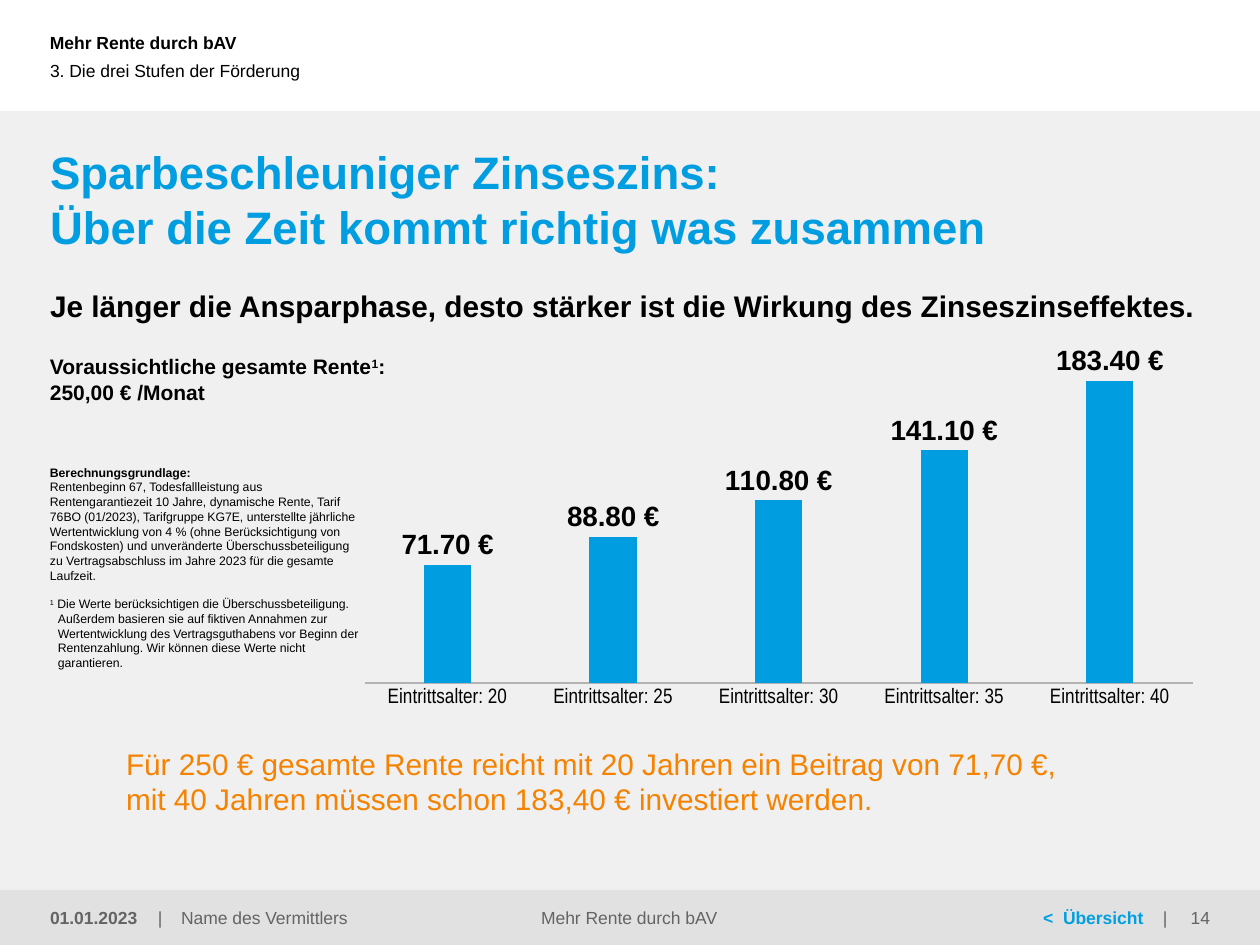
from dataclasses import dataclass

from lxml.etree import SubElement
from pptx import Presentation
from pptx.chart.data import CategoryChartData
from pptx.dml.color import RGBColor
from pptx.enum.chart import XL_CHART_TYPE, XL_LABEL_POSITION, XL_TICK_LABEL_POSITION, XL_TICK_MARK
from pptx.enum.shapes import MSO_SHAPE
from pptx.enum.text import MSO_ANCHOR, MSO_AUTO_SIZE, PP_ALIGN
from pptx.oxml.ns import qn
from pptx.util import Pt


@dataclass(frozen=True)
class Theme:
    font: str = "Arial"
    axis_font: str = "Arial Narrow"
    black: str = "000000"
    blue: str = "009EE0"
    link: str = "00A0E1"
    orange: str = "F58200"
    grey: str = "646464"
    axis: str = "B3B3B3"
    panel: str = "F0F0F0"
    footer: str = "E1E1E1"
    title_size: float = 26
    lead_size: float = 17
    label_size: float = 15.9
    pension_size: float = 12
    axis_size: float = 11.9
    small_size: float = 10
    note_size: float = 7


THEME = Theme()
PX_PER_INCH = 126
FOOTER_TOP, FOOTER_HEIGHT = 890, 55
MARGIN = 50


def px(length):
    return round(length * 914400 / PX_PER_INCH)


def apply_format(target, values):
    for name, value in values.items():
        setattr(target, name, value)


def format_font(font, size, color, bold=False, name=THEME.font):
    apply_format(font, {"name": name, "size": Pt(size), "bold": bold})
    font.color.rgb = RGBColor.from_string(color)


def place(shape, box):
    apply_format(shape, dict(zip(("left", "top", "width", "height"), map(px, box))))


def add_panel(slide, box, color):
    panel = slide.shapes.add_shape(MSO_SHAPE.RECTANGLE, *map(px, box))
    panel.shadow.inherit = False
    panel.fill.solid()
    panel.fill.fore_color.rgb = RGBColor.from_string(color)
    panel.line.fill.background()


def add_runs(paragraph, runs, size):
    """Each run is (text, colour, bold, baseline); a newline is a line break."""
    for text, color, bold, baseline in runs:
        for number, line in enumerate(text.split("\n")):
            if number:
                paragraph.add_line_break()
            if line:
                run = paragraph.add_run()
                run.text = line
                format_font(run.font, size, color, bold)
                if baseline:
                    run.font._element.set("baseline", str(baseline * 1000))


def write(shape, paragraphs, size, anchor=MSO_ANCHOR.TOP, insets=(0, 0, 0, 0),
          align=PP_ALIGN.LEFT, hanging=0, before=0, after=0):
    """Hanging indent and space before apply from the second paragraph on."""
    frame = shape.text_frame
    margins = ("margin_left", "margin_top", "margin_right", "margin_bottom")
    apply_format(frame, {"word_wrap": True, "auto_size": MSO_AUTO_SIZE.NONE,
                         "vertical_anchor": anchor, **dict(zip(margins, map(px, insets)))})
    for number, runs in enumerate(paragraphs):
        paragraph = frame.add_paragraph() if number else frame.paragraphs[0]
        indent = px(hanging) if number else 0
        properties = paragraph._p.get_or_add_pPr()
        properties.set("marL", str(indent))
        properties.set("indent", str(-indent))
        SubElement(properties, qn("a:buNone"))
        apply_format(paragraph, {"alignment": align, "line_spacing": 1.0,
                                 "space_before": Pt(before if number else 0),
                                 "space_after": Pt(after)})
        add_runs(paragraph, runs, size)


def add_text(slide, box, paragraphs, size=THEME.small_size, **layout):
    write(slide.shapes.add_textbox(*map(px, box)), paragraphs, size, **layout)


def fill_placeholder(placeholder, box, text, size, color, bold=False, **layout):
    place(placeholder, box)
    write(placeholder, [[(text, color, bold, 0)]], size, **layout)


def set_plot_area(chart, **fractions):
    plot_area = chart._chartSpace.chart.plotArea
    for old in plot_area.findall(qn("c:layout")):
        plot_area.remove(old)
    layout = SubElement(plot_area, qn("c:layout"))
    plot_area.insert(0, layout)
    manual = SubElement(layout, qn("c:manualLayout"))
    settings = {"layoutTarget": "inner", "xMode": "edge", "yMode": "edge", **fractions}
    for tag, value in settings.items():
        SubElement(manual, qn(f"c:{tag}"), val=str(value))


def add_contribution_chart(slide, box):
    data = CategoryChartData()
    data.categories = [f"Eintrittsalter: {age}" for age in range(20, 41, 5)]
    data.add_series("Series 1", (71.7, 88.8, 110.8, 141.1, 183.4))
    chart = slide.shapes.add_chart(XL_CHART_TYPE.COLUMN_CLUSTERED, *map(px, box), data).chart
    apply_format(chart, {"has_legend": False, "has_title": False})
    format_font(chart.font, THEME.axis_size, THEME.black, name=THEME.axis_font)
    set_plot_area(chart, x=0.014, y=0.032, w=0.982, h=0.864)

    # Axes
    apply_format(chart.value_axis, {"visible": False, "has_major_gridlines": False,
                                    "major_tick_mark": XL_TICK_MARK.NONE,
                                    "minimum_scale": 0, "maximum_scale": 200})
    ages = chart.category_axis
    apply_format(ages, {"major_tick_mark": XL_TICK_MARK.NONE,
                        "minor_tick_mark": XL_TICK_MARK.NONE,
                        "tick_label_position": XL_TICK_LABEL_POSITION.NEXT_TO_AXIS})
    ages.format.line.color.rgb = RGBColor.from_string(THEME.axis)
    ages.format.line.width = Pt(1.5)

    # Columns and their amounts
    columns = chart.plots[0]
    apply_format(columns, {"gap_width": 250, "overlap": -20,
                           "vary_by_categories": False, "has_data_labels": True})
    fill = columns.series[0].format.fill
    fill.solid()
    fill.fore_color.rgb = RGBColor.from_string(THEME.blue)
    amounts = columns.data_labels
    apply_format(amounts, {"show_value": True, "position": XL_LABEL_POSITION.OUTSIDE_END,
                           "number_format": '#,##0.00\\ "€"', "number_format_is_linked": False})
    format_font(amounts.font, THEME.label_size, THEME.black, True)


def add_footer(slide):
    left, center, right = PP_ALIGN.LEFT, PP_ALIGN.CENTER, PP_ALIGN.RIGHT
    grey, link = THEME.grey, THEME.link
    entries = (
        (MARGIN, 105, "01.01.2023", grey, True, left),
        (158, 15, "|", grey, False, left),
        (181, 282, "Name des Vermittlers", grey, False, left),
        (369, 520, "Mehr Rente durch bAV", grey, False, center),
        (1043, 18, "<", link, True, left),
        (1063, 95, "Übersicht", link, True, left),
        (1163, 15, "|", grey, False, left),
        (1180, 30, "14", grey, False, right),
    )
    for x, width, text, color, bold, align in entries:
        add_text(slide, (x, FOOTER_TOP, width, FOOTER_HEIGHT), [[(text, color, bold, 0)]],
                 anchor=MSO_ANCHOR.MIDDLE, align=align)


def main():
    deck = Presentation()
    apply_format(deck, {"slide_width": px(1260), "slide_height": px(945)})
    slide = deck.slides.add_slide(deck.slide_layouts.get_by_name("Comparison"))
    title, lead, chapter, conclusion, unused = slide.placeholders
    unused.element.getparent().remove(unused.element)

    # Background bands, behind the placeholders
    add_panel(slide, (0, 111, 1260, 834), THEME.panel)
    add_panel(slide, (0, FOOTER_TOP, 1260, FOOTER_HEIGHT), THEME.footer)
    for placeholder in (title, lead, chapter, conclusion):
        slide.shapes._spTree.append(placeholder.element)

    # Header, title and statements
    black = THEME.black
    add_text(slide, (MARGIN, 0, 830, 85), [[("Mehr Rente durch bAV", black, True, 0)]],
             anchor=MSO_ANCHOR.MIDDLE)
    fill_placeholder(chapter, (0, 31, 901, 79), "3. Die drei Stufen der Förderung",
                     THEME.small_size, black, anchor=MSO_ANCHOR.MIDDLE,
                     insets=(MARGIN, 0, 0, 0), after=12)
    fill_placeholder(title, (MARGIN, 144, 1162, 69),
                     "Sparbeschleuniger Zinseszins:\nÜber die Zeit kommt richtig was zusammen",
                     THEME.title_size, THEME.blue, True)
    fill_placeholder(lead, (MARGIN, 288, 1162, 37),
                     "Je länger die Ansparphase, desto stärker ist die Wirkung des Zinseszinseffektes.",
                     THEME.lead_size, black, True, after=12)
    fill_placeholder(conclusion, (126, 743, 1085, 86),
                     "Für 250 € gesamte Rente reicht mit 20 Jahren ein Beitrag von 71,70 €,\n"
                     "mit 40 Jahren müssen schon 183,40 € investiert werden.",
                     THEME.lead_size, THEME.orange, anchor=MSO_ANCHOR.MIDDLE,
                     insets=(0, 0, 0, 10), after=12)

    # Expected pension and basis of calculation
    add_text(slide, (MARGIN, 354, 630, 55),
             [[("Voraussichtliche gesamte Rente", black, True, 0), ("1", black, True, 30),
               (":", black, True, 0)], [("250,00 € /Monat", black, True, 0)]],
             THEME.pension_size)
    add_text(slide, (MARGIN, 441, 315, 229),
             [[("Berechnungsgrundlage:\n", black, True, 0),
               ("Rentenbeginn 67, Todesfallleistung aus Rentengarantiezeit 10 Jahre, dynamische "
                "Rente, Tarif 76BO (01/2023), Tarifgruppe KG7E, unterstellte jährliche "
                "Wertentwicklung von 4 % (ohne Berücksichtigung von Fondskosten) und unveränderte "
                "Überschussbeteiligung zu Vertragsabschluss im Jahre 2023 für die gesamte "
                "Laufzeit.", black, False, 0)],
              [("1", black, False, 30),
               (" Die Werte berücksichtigen die Überschussbeteiligung. Außerdem basieren sie auf "
                "fiktiven Annahmen zur Wertentwicklung des Vertragsguthabens vor Beginn der "
                "Rentenzahlung. Wir können diese Werte nicht garantieren.", black, False, 0)]],
             THEME.note_size, anchor=MSO_ANCHOR.BOTTOM, hanging=8, before=8)

    add_contribution_chart(slide, (353, 341, 843, 382))
    add_footer(slide)
    deck.save("out.pptx")


if __name__ == "__main__":
    main()
